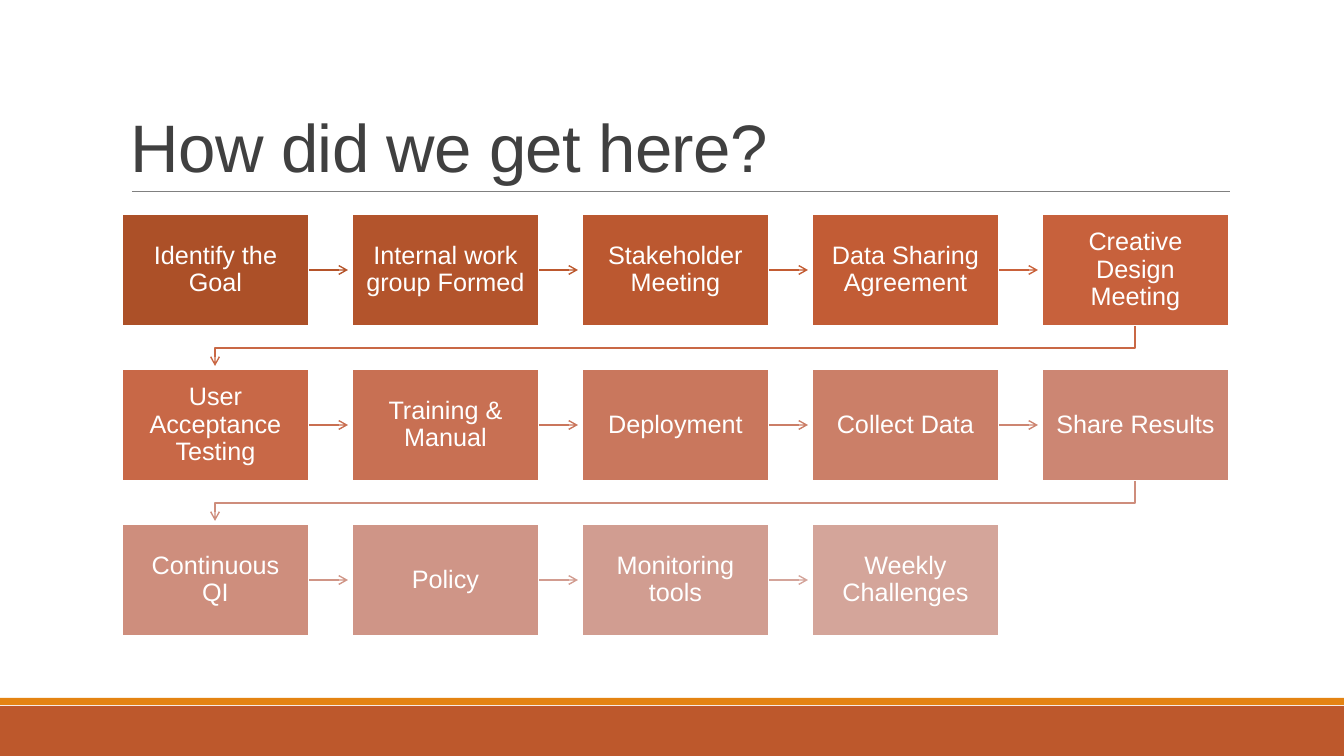
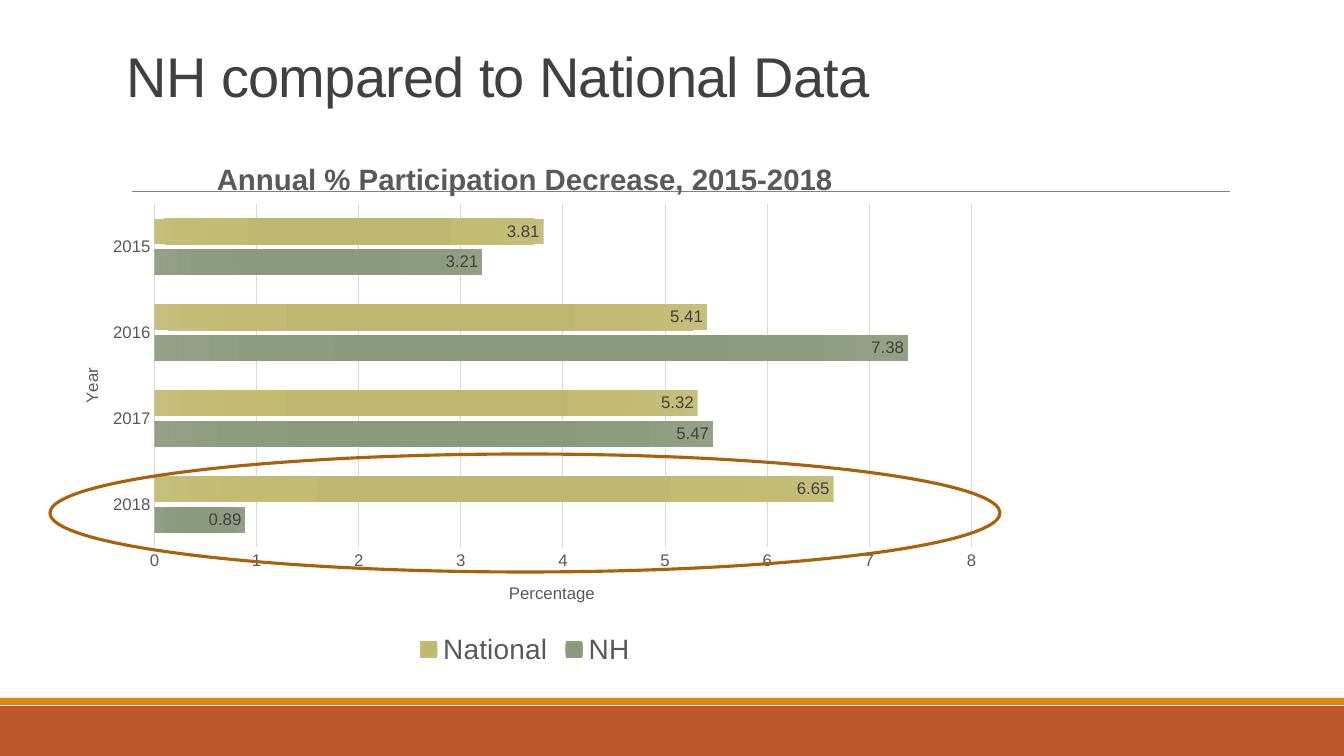
from dataclasses import dataclass

import pptx
import pptx.chart.data
import pptx.dml.color
import pptx.enum.chart
import pptx.enum.shapes
import pptx.enum.text
import pptx.oxml
import pptx.oxml.ns
import pptx.util

WIDE, HIGH = 1344, 756
SCALE = 12192000 / WIDE  # EMU in one px
FONT = "Arial"
WHITE, DARK, GREY, PALE = "FFFFFF", "404040", "595959", "D9D9D9"
RUST, AMBER, RULE, RING = "BD582C", "E48312", "808080", "A9610D"

SHAPE = pptx.enum.shapes.MSO_SHAPE
ANCHOR = pptx.enum.text.MSO_ANCHOR
ALIGN = pptx.enum.text.PP_ALIGN
Pt = pptx.util.Pt


@dataclass
class Step:
    text: str
    fill: str
    arrow: str = ""


@dataclass
class Series:
    name: str
    vals: list[float]
    stops: list[str]


@dataclass
class Title:
    text: str
    x: float
    y: float
    size: int
    bold: bool = False
    turn: int = 0


# Process steps, in reading order
COLS = 5
BOX_W, BOX_H = 187, 112
LEFT, TOP = 122, 214
STEP_X, STEP_Y = 230, 155
STEPS = [
    Step("Identify the Goal", "AC5028", "B5542A"),
    Step("Internal work group Formed", "B3542C", "BC582E"),
    Step("Stakeholder Meeting", "BB5830", "C35C33"),
    Step("Data Sharing Agreement", "C25C35", "C9613A"),
    Step("Creative Design Meeting", "C7613C", "C96845"),
    Step("User Acceptance Testing", "C86847", "C96F51"),
    Step("Training & Manual", "C87053", "CA765C"),
    Step("Deployment", "C9775D", "CB7E67"),
    Step("Collect Data", "CB7F68", "CD8571"),
    Step("Share Results", "CC8673", "CE8D7C"),
    Step("Continuous QI", "CE8E7D", "D09586"),
    Step("Policy", "CF9587", "D29C90"),
    Step("Monitoring tools", "D19D91", "D4A49A"),
    Step("Weekly Challenges", "D4A59A"),
]

# Chart content
YEARS = ["2018", "2017", "2016", "2015"]
SERIES = [
    Series("NH", [0.89, 5.47, 7.38, 3.21], ["8A987B", "8B997D", "8D9C7E", "94A187"]),
    Series("National", [6.65, 5.32, 5.41, 3.81], ["BEB76E", "BEB771", "C3BB71", "C5BF7D"]),
]
STOPS = [0, 34, 70, 100]
HEAD = Title("Annual % Participation Decrease, 2015-2018", 0.17, 0.04, 21, True)
YEAR = Title("Year", 0.03, 0.43, 12, turn=-90)
RATE = Title("Percentage", 0.48, 0.83, 12)


def px(num: float) -> int:
    return round(num * SCALE)


def hue(code: str) -> pptx.dml.color.RGBColor:
    return pptx.dml.color.RGBColor.from_string(code)


def style(font, size: int, code: str, bold: bool = False) -> None:
    font.name, font.size, font.bold = FONT, Pt(size), bold
    font.color.rgb = hue(code)


def pen(line, code: str, width: float) -> None:
    line.color.rgb = hue(code)
    line.width = Pt(width)


def xml(text: str):
    """Build an element that may use the a: and c: prefixes."""
    head, rest = text.split(">", 1)
    close = "/" if head.endswith("/") else ""
    return pptx.oxml.parse_xml(
        f"{head.rstrip('/')} {pptx.oxml.ns.nsdecls('a', 'c')}{close}>{rest}")


# Shared parts

def shape(slide, kind, x: int, y: int, w: int, h: int, fill: str = ""):
    item = slide.shapes.add_shape(kind, px(x), px(y), px(w), px(h))
    item.shadow.inherit = False
    item.line.fill.background()
    if fill:
        item.fill.solid()
        item.fill.fore_color.rgb = hue(fill)
    else:
        item.fill.background()
    return item


def link(slide, x: int, y: int, end_x: int, end_y: int, code: str, width: float):
    line = slide.shapes.add_connector(
        pptx.enum.shapes.MSO_CONNECTOR.STRAIGHT, px(x), px(y), px(end_x), px(end_y))
    pen(line.line, code, width)
    line._element.spPr.append(xml("<a:effectLst/>"))
    return line


def tip(item) -> None:
    item.line._get_or_add_ln().append(xml('<a:tailEnd type="arrow"/>'))


def frame(deck, text: str, x: int, y: int, h: int, size: int, anchor):
    """Add a slide with its bands, rule and title."""
    slide = deck.slides.add_slide(deck.slide_layouts[6])
    shape(slide, SHAPE.RECTANGLE, 0, 706, WIDE, 50, RUST)
    shape(slide, SHAPE.RECTANGLE, 0, 698, WIDE, 7, AMBER)
    link(slide, 132, 191, 1230, 191, RULE, 0.5)
    box = slide.shapes.add_textbox(px(x), px(y), px(1109), px(h))
    body = box.text_frame
    body.text, body.word_wrap, body.vertical_anchor = text, True, anchor
    line = body.paragraphs[0]
    line.line_spacing = 0.85
    style(line.runs[0].font, size, DARK)
    line.runs[0]._r.get_or_add_rPr().set("spc", "-50")
    return slide


# Process flow

def card(slide, step: Step, x: int, y: int):
    box = shape(slide, SHAPE.RECTANGLE, x, y, BOX_W, BOX_H, step.fill)
    pen(box.line, WHITE, 1.25)
    body = box.text_frame
    body.text, body.word_wrap, body.vertical_anchor = step.text, True, ANCHOR.MIDDLE
    body.margin_left = body.margin_right = px(14)
    body.margin_top = body.margin_bottom = px(14)
    line = body.paragraphs[0]
    line.alignment, line.line_spacing = ALIGN.CENTER, 0.9
    style(line.runs[0].font, 18, WHITE)
    return box


def wrap(slide, x: int, y: int, code: str) -> None:
    """Lead from the last box of a row to the first of the next."""
    first = LEFT + BOX_W // 2
    path = slide.shapes.build_freeform(px(x), px(y), 1.0)
    path.add_line_segments(
        [(px(x), px(y + 22)), (px(first), px(y + 22)), (px(first), px(y + 40))],
        close=False)
    bend = path.convert_to_shape()
    bend.shadow.inherit = False
    bend.fill.background()
    pen(bend.line, code, 1)
    tip(bend)


def flow(slide) -> None:
    for num, step in enumerate(STEPS):
        row, col = divmod(num, COLS)
        x, y = LEFT + col * STEP_X, TOP + row * STEP_Y
        box = card(slide, step, x, y)
        if not step.arrow:
            continue
        if col == COLS - 1:
            wrap(slide, x + BOX_W // 2, y + BOX_H, step.arrow)
        else:
            right, mid = x + BOX_W, y + BOX_H // 2
            line = link(slide, right, mid, right + 39, mid, step.arrow, 1)
            line.begin_connect(box, 3)
            tip(line)


# Chart

def place(owner, spot: int, inner: bool = False, **sides: float) -> None:
    """Fix a chart part at shares of the chart's size."""
    for old in owner.findall(pptx.oxml.ns.qn("c:layout")):
        owner.remove(old)
    parts = '<c:layoutTarget val="inner"/>' if inner else ""
    parts += '<c:xMode val="edge"/><c:yMode val="edge"/>'
    parts += "".join(f'<c:{key} val="{val}"/>' for key, val in sides.items())
    owner.insert(spot, xml(f"<c:layout><c:manualLayout>{parts}</c:manualLayout></c:layout>"))


def label(item, title: Title) -> None:
    body = item.text_frame
    body.text = title.text
    style(body.paragraphs[0].runs[0].font, title.size, GREY, title.bold)
    body._txBody.bodyPr.set("rot", str(title.turn * 60000))
    place(item._element, 1, x=title.x, y=title.y)


def blend(item, codes: list[str]) -> None:
    stops = "".join(f'<a:gs pos="{pos * 1000}"><a:srgbClr val="{code}"/></a:gs>'
                    for pos, code in zip(STOPS, codes))
    rect = " ".join(f'{side}="100000"' for side in "ltrb")
    item._element.get_or_add_spPr().insert(0, xml(
        f'<a:gradFill rotWithShape="1"><a:gsLst>{stops}</a:gsLst>'
        f'<a:path path="circle"><a:fillToRect {rect}/></a:path></a:gradFill>'))


def graph(slide) -> None:
    data = pptx.chart.data.CategoryChartData()
    data.categories = YEARS
    for row in SERIES:
        data.add_series(row.name, row.vals)
    kinds = pptx.enum.chart
    chart = slide.shapes.add_chart(
        kinds.XL_CHART_TYPE.BAR_CLUSTERED, px(50), px(134), px(950), px(537), data).chart
    style(chart.font, 10, "000000")
    chart.has_title = True
    label(chart.chart_title, HEAD)
    place(chart._chartSpace.chart.plotArea, 0, True, x=0.11, y=0.13, w=0.86, h=0.64)

    # Bars and their values
    plot = chart.plots[0]
    plot.gap_width, plot.overlap, plot.vary_by_categories = 115, -20, False
    for item, row in zip(plot.series, SERIES):
        blend(item, row.stops)
        tags = item.data_labels
        tags.show_value = True
        tags.position = kinds.XL_LABEL_POSITION.INSIDE_END
        style(tags.font, 12, DARK)

    # Axes and legend
    years, rates = chart.category_axis, chart.value_axis
    for axis, title in ((years, YEAR), (rates, RATE)):
        axis.major_tick_mark = axis.minor_tick_mark = kinds.XL_TICK_MARK.NONE
        style(axis.tick_labels.font, 12, GREY)
        label(axis.axis_title, title)
    pen(years.format.line, PALE, 1)
    rates.minimum_scale, rates.maximum_scale, rates.major_unit = 0, 8, 1
    rates.format.line.fill.background()
    rates.has_major_gridlines = True
    pen(rates.major_gridlines.format.line, PALE, 0.75)
    chart.has_legend = True
    chart.legend.position = kinds.XL_LEGEND_POSITION.BOTTOM
    chart.legend.include_in_layout = False
    style(chart.legend.font, 20, GREY)


def main() -> None:
    deck = pptx.Presentation()
    deck.slide_width, deck.slide_height = px(WIDE), px(HIGH)

    flow(frame(deck, "How did we get here?", 121, 31, 160, 48, ANCHOR.BOTTOM))

    slide = frame(deck, "NH compared to National Data", 117, 47, 86, 40, ANCHOR.TOP)
    graph(slide)
    ring = shape(slide, SHAPE.OVAL, 50, 454, 950, 118)
    pen(ring.line, RING, 2.25)

    deck.save("out.pptx")


if __name__ == "__main__":
    main()
